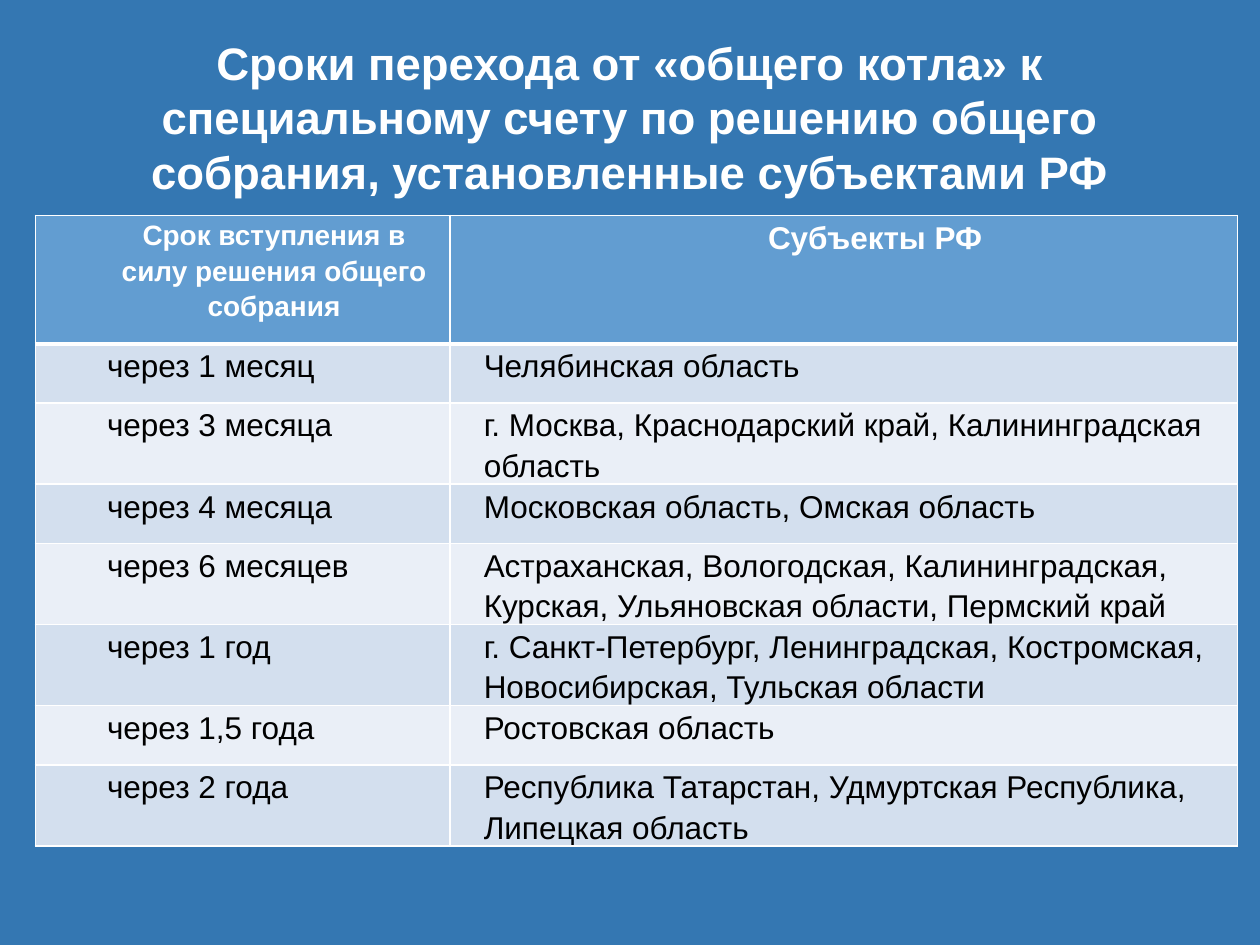
from lxml.etree import SubElement
from pptx import Presentation
from pptx.dml.color import RGBColor
from pptx.enum.text import MSO_ANCHOR, PP_ALIGN
from pptx.oxml.ns import qn
from pptx.util import Inches, Pt

BLUE = RGBColor(0x34, 0x77, 0xB2)
HEAD = RGBColor(0x62, 0x9D, 0xD1)
DARK = RGBColor(0xD3, 0xDF, 0xEE)
PALE = RGBColor(0xEA, 0xEF, 0xF7)
WHITE = RGBColor(0xFF, 0xFF, 0xFF)
BLACK = RGBColor(0, 0, 0)

ROWS = [
    ("Срок вступления в силу решения общего собрания", "Субъекты РФ"),
    ("через 1 месяц", "Челябинская область"),
    ("через 3 месяца", "г. Москва, Краснодарский край, Калининградская область"),
    ("через 4 месяца", "Московская область, Омская область"),
    ("через 6 месяцев", "Астраханская, Вологодская, Калининградская, "
                        "Курская, Ульяновская области, Пермский край"),
    ("через 1 год", "г. Санкт-Петербург, Ленинградская, Костромская, "
                    "Новосибирская, Тульская области"),
    ("через 1,5 года", "Ростовская область"),
    ("через 2 года", "Республика Татарстан, Удмуртская Республика, Липецкая область"),
]


def write(frame, text, size=18, color=BLACK, bold=False,
          align=PP_ALIGN.LEFT, indent=0, space=None):
    para = frame.paragraphs[0]
    para.alignment = align
    if space:
        para.line_spacing = space
    props = para._p.get_or_add_pPr()
    props.set("marL", str(Inches(indent)))
    props.set("indent", "0")
    run = para.add_run()
    run.text = text
    font = run.font
    font.name, font.size, font.bold = "Arial", Pt(size), bold
    font.color.rgb = color


def edge(cell, base):
    """Draw white borders, with the bottom one base points wide."""
    props = cell._tc.get_or_add_tcPr()
    for place, (side, width) in enumerate(
            [("lnL", 1), ("lnR", 1), ("lnT", 1), ("lnB", base)]):
        line = SubElement(props, qn(f"a:{side}"), w=str(Pt(width)))
        fill = SubElement(line, qn("a:solidFill"))
        SubElement(fill, qn("a:srgbClr"), val=str(WHITE))
        props.insert(place, line)


deck = Presentation()
deck.slide_width, deck.slide_height = Inches(10), Inches(7.5)
slide = deck.slides.add_slide(deck.slide_layouts[5])
slide.background.fill.solid()
slide.background.fill.fore_color.rgb = BLUE

title = slide.shapes.title
title.left, title.top = Inches(0.5), Inches(0.3)
title.width, title.height = Inches(9), Inches(1.25)
title.text_frame.word_wrap = True
title.text_frame.vertical_anchor = MSO_ANCHOR.MIDDLE
write(title.text_frame,
      "Сроки перехода от «общего котла» к специальному счету по решению "
      "общего собрания, установленные субъектами РФ",
      size=26, color=WHITE, bold=True, align=PP_ALIGN.CENTER)

table = slide.shapes.add_table(len(ROWS), 2, Inches(0.28), Inches(1.71),
                               Inches(9.54), Inches(4.31)).table
for col, width in zip(table.columns, (3.29, 6.25)):
    col.width = Inches(width)

for r, texts in enumerate(ROWS):
    top = r == 0
    table.rows[r].height = Inches(1.02 if top else 0.47)
    for c, text in enumerate(texts):
        cell = table.cell(r, c)
        cell.margin_left = cell.margin_right = Inches(0.07)
        cell.margin_top = cell.margin_bottom = 0
        cell.fill.solid()
        cell.fill.fore_color.rgb = HEAD if top else DARK if r % 2 else PALE
        edge(cell, 3 if top else 1)
        write(cell.text_frame, text,
              size=16 if top and c == 0 else 18,
              color=WHITE if top else BLACK, bold=top,
              align=PP_ALIGN.CENTER if top else PP_ALIGN.LEFT,
              indent=0.5 if top or c == 0 else 0.2, space=1.15)

deck.save("out.pptx")
